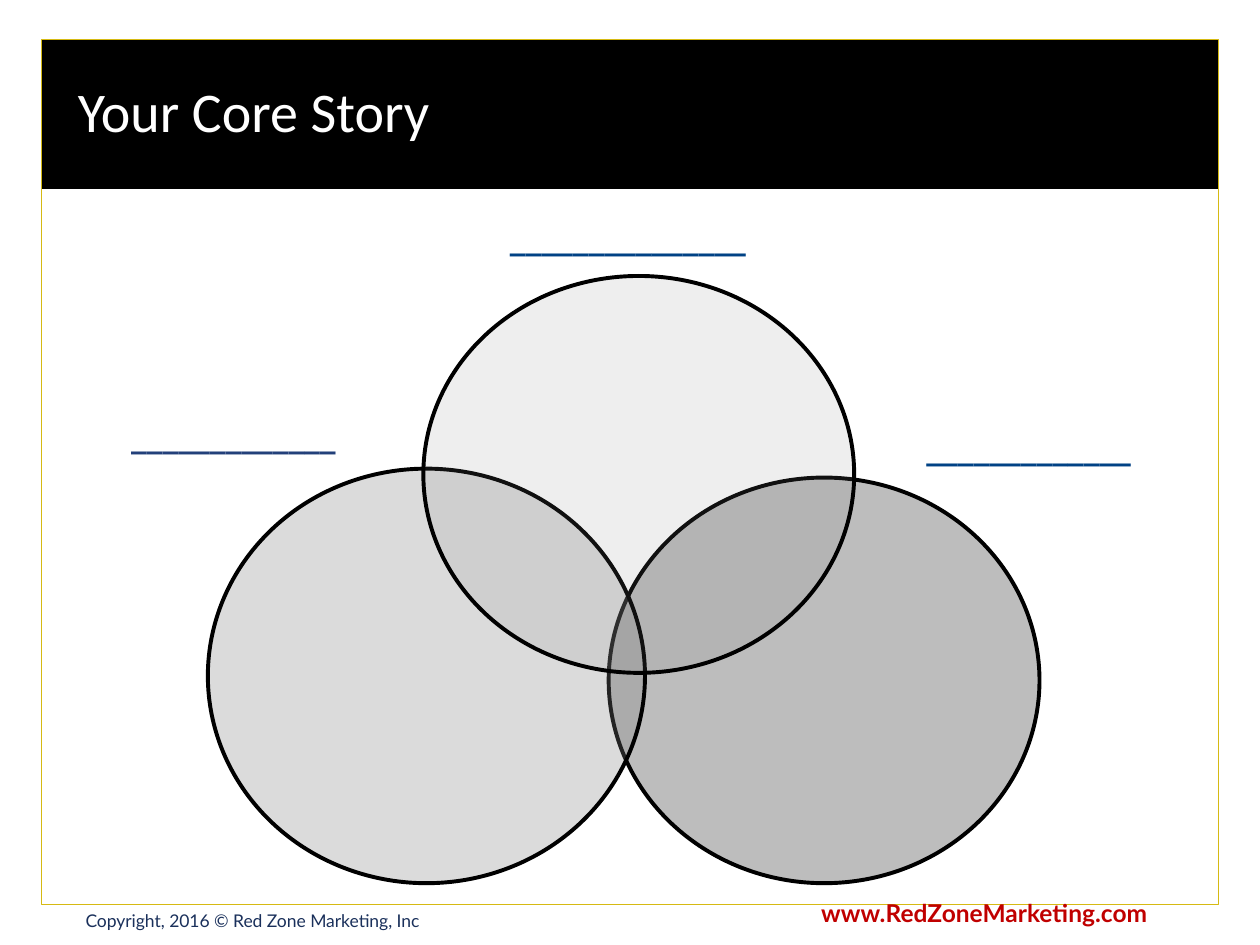
from lxml.etree import SubElement
from pptx import Presentation
from pptx.dml.color import RGBColor
from pptx.enum.shapes import MSO_SHAPE as Shape
from pptx.enum.text import MSO_ANCHOR as Anchor, PP_ALIGN as Align
from pptx.oxml.ns import qn
from pptx.util import Pt

COLORS = {
    "black": "000000", "white": "FFFFFF", "gold": "D6BA13", "gray": "7F7F7F",
    "navy": "1A305B", "red": "C00000", "blue": "004285", "slate": "23407A",
}

# Left, top, width, height in points, then opacity in percent; back to front
CIRCLES = [
    (347.8, 272.9, 246.2, 231.8, 51),
    (118.8, 267.8, 249.8, 236.9, 28),
    (241.9, 157.7, 246.2, 226.8, 13),
]

# Left, top, width in points, then number of underscores and colour
BLANKS = [
    (252, 121, 213.8, 15, "blue"),
    (30.2, 234, 206.6, 13, "slate"),
    (491.8, 241.2, 192.2, 13, "blue"),
]


def color(name):
    return RGBColor.from_string(COLORS[name])


def add_shape(slide, kind, box, fill=None, line=None, line_width=1, opacity=100):
    shape = slide.shapes.add_shape(kind, *map(Pt, box))
    shape.shadow.inherit = False
    if fill:
        shape.fill.solid()
        shape.fill.fore_color.rgb = color(fill)
        if opacity < 100:
            solid = shape.fill._xPr.find(qn("a:solidFill"))
            SubElement(solid[0], qn("a:alpha"), val=str(opacity * 1000))
    else:
        shape.fill.background()
    if line:
        shape.line.color.rgb = color(line)
        shape.line.width = Pt(line_width)
    else:
        shape.line.fill.background()


def add_text(slide, box, text, font_color, size, font="Lato", bold=False,
             wrap=True, **paragraph_format):
    text_box = slide.shapes.add_textbox(*map(Pt, box))
    frame = text_box.text_frame
    frame.word_wrap = wrap
    paragraph = frame.paragraphs[0]
    paragraph.text = text
    for name, value in paragraph_format.items():
        setattr(paragraph, name, value)
    run_font = paragraph.runs[0].font
    for name, value in {"name": font, "size": Pt(size), "bold": bold}.items():
        setattr(run_font, name, value)
    run_font.color.rgb = color(font_color)
    return frame


def add_frame(slide):
    """Header band, slide border and footer."""
    add_shape(slide, Shape.RECTANGLE, (23.8, 22.3, 672.5, 85.7), fill="black")
    add_shape(slide, Shape.RECTANGLE, (23.8, 22.3, 672.5, 494.6),
              line="gold", line_width=0.5)
    add_text(slide, (30.2, 516.2, 228.2, 30.2),
             "Copyright, 2016 © Red Zone Marketing, Inc", "navy", 10,
             wrap=False, alignment=Align.CENTER)
    add_text(slide, (462.2, 509.8, 226.1, 24.5), "www.RedZoneMarketing.com",
             "red", 14, bold=True, wrap=False, alignment=Align.LEFT)


def main():
    presentation = Presentation()
    presentation.slide_width, presentation.slide_height = Pt(720), Pt(540)
    slide = presentation.slides.add_slide(presentation.slide_layouts[6])

    add_frame(slide)
    title = add_text(slide, (37.4, 29.5, 655.2, 71.3), "Your Core Story",
                     "white", 32, font="Calibri", line_spacing=0.9)
    title.vertical_anchor = Anchor.MIDDLE
    for *box, opacity in CIRCLES:
        add_shape(slide, Shape.OVAL, box, fill="gray", line="black",
                  line_width=2.25, opacity=opacity)
    for left, top, width, count, blank_color in BLANKS:
        add_text(slide, (left, top, width, 28.8), "_" * count, blank_color, 18,
                 font="DejaVu Sans", bold=True, alignment=Align.CENTER)

    presentation.save("out.pptx")


if __name__ == "__main__":
    main()
